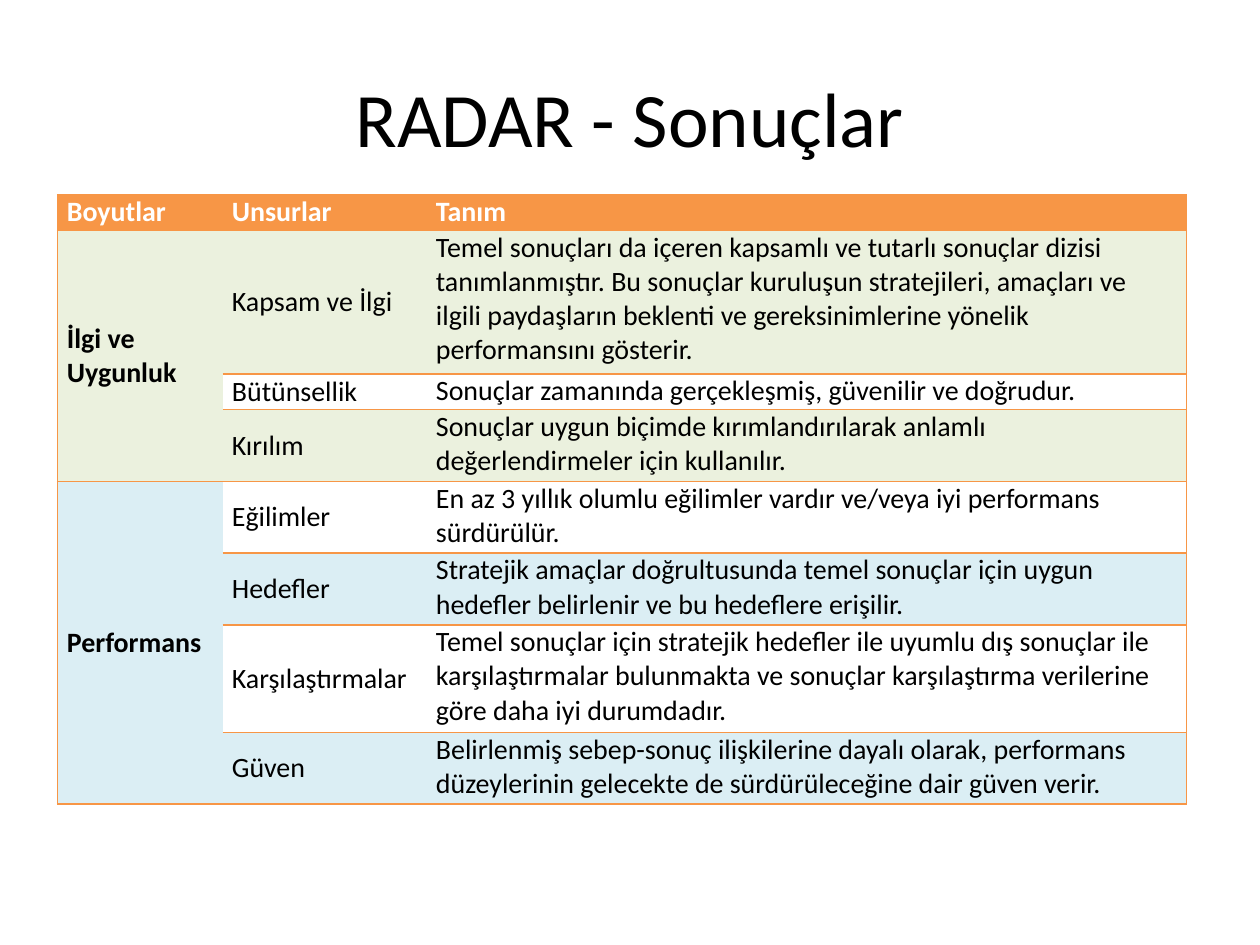
from lxml import etree
from pptx import Presentation
from pptx.dml.color import RGBColor
from pptx.enum.text import MSO_ANCHOR, PP_ALIGN
from pptx.oxml.ns import qn
from pptx.util import Pt

LEFT, CENTER, JUSTIFY = PP_ALIGN.LEFT, PP_ALIGN.CENTER, PP_ALIGN.JUSTIFY
TOP, MIDDLE = MSO_ANCHOR.TOP, MSO_ANCHOR.MIDDLE
ORANGE, GREEN, BLUE = "F79646", "EBF1DE", "DBEEF4"
BLACK, WHITE = "000000", "FFFFFF"

TITLE = "RADAR - Sonuçlar"
HEADERS = ["Boyutlar", "Unsurlar", "Tanım"]
# (dimension, band colour, [(element, definition, row height)])
GROUPS = [
    ("İlgi ve Uygunluk", GREEN, [
        ("Kapsam ve İlgi", "Temel sonuçları da içeren kapsamlı ve tutarlı sonuçlar dizisi "
         "tanımlanmıştır. Bu sonuçlar kuruluşun stratejileri, amaçları ve ilgili paydaşların "
         "beklenti ve gereksinimlerine yönelik performansını gösterir.", 82),
        ("Bütünsellik", "Sonuçlar zamanında gerçekleşmiş, güvenilir ve doğrudur.", 20.4),
        ("Kırılım", "Sonuçlar uygun biçimde kırımlandırılarak anlamlı değerlendirmeler "
         "için kullanılır.", 41),
    ]),
    ("Performans", BLUE, [
        ("Eğilimler", "En az 3 yıllık olumlu eğilimler vardır ve/veya iyi performans "
         "sürdürülür.", 41),
        ("Hedefler", "Stratejik amaçlar doğrultusunda temel sonuçlar için uygun hedefler "
         "belirlenir ve bu hedeflere erişilir.", 41),
        ("Karşılaştırmalar", "Temel sonuçlar için stratejik hedefler ile uyumlu dış sonuçlar "
         "ile karşılaştırmalar bulunmakta ve sonuçlar karşılaştırma verilerine göre daha iyi "
         "durumdadır.", 61.4),
        ("Güven", "Belirlenmiş sebep-sonuç ilişkilerine dayalı olarak, performans "
         "düzeylerinin gelecekte de sürdürüleceğine dair güven verir.", 41),
    ]),
]
HEADER_HEIGHT = 20.4
COLUMN_WIDTHS = [94.3, 116.6, 434.2]
TABLE_LEFT, TABLE_TOP = 33, 111.4
CELL_INSET = 5.3


def color(value):
    return RGBColor.from_string(value)


def write(frame, text, size=16, fill=BLACK, bold=False, align=LEFT, spacing=0):
    frame.word_wrap = True
    paragraph = frame.paragraphs[0]
    paragraph.alignment = align
    paragraph.space_before = paragraph.space_after = Pt(spacing)
    run = paragraph.add_run()
    run.text = text
    run.font.name = "Calibri"
    run.font.size = Pt(size)
    run.font.bold = bold
    run.font.color.rgb = color(fill)


def set_borders(cell, sides):
    """Draw the sides named in `sides` (of L, R, T, B) and clear the others."""
    properties = cell._tc.get_or_add_tcPr()
    for index, side in enumerate("LRTB"):
        line = etree.Element(qn(f"a:ln{side}"), w=str(Pt(1)))
        if side in sides:
            solid = etree.SubElement(line, qn("a:solidFill"))
            etree.SubElement(solid, qn("a:srgbClr"), val=ORANGE)
        else:
            etree.SubElement(line, qn("a:noFill"))
        properties.insert(index, line)


def fill_cell(cell, text, background=None, anchor=TOP, **text_format):
    cell.margin_left = cell.margin_right = Pt(CELL_INSET)
    cell.margin_top = cell.margin_bottom = 0
    cell.vertical_anchor = anchor
    if background:
        cell.fill.solid()
        cell.fill.fore_color.rgb = color(background)
    else:
        cell.fill.background()
    if text:
        write(cell.text_frame, text, **text_format)


presentation = Presentation()
presentation.slide_width, presentation.slide_height = Pt(720), Pt(540)
slide = presentation.slides.add_slide(presentation.slide_layouts[6])

title = slide.shapes.add_textbox(Pt(36), Pt(21.6), Pt(648), Pt(90))
title.text_frame.vertical_anchor = MIDDLE
write(title.text_frame, TITLE, size=44, align=CENTER)

heights = [HEADER_HEIGHT] + [row[2] for group in GROUPS for row in group[2]]
table = slide.shapes.add_table(
    len(heights), len(HEADERS), Pt(TABLE_LEFT), Pt(TABLE_TOP),
    Pt(sum(COLUMN_WIDTHS)), Pt(sum(heights))).table
table.first_row = table.horz_banding = False
for column, width in zip(table.columns, COLUMN_WIDTHS):
    column.width = Pt(width)
for row, height in zip(table.rows, heights):
    row.height = Pt(height)

for index, (header, sides) in enumerate(zip(HEADERS, ["LTB", "TB", "TRB"])):
    cell = table.cell(0, index)
    fill_cell(cell, header, ORANGE, fill=WHITE, bold=True, align=JUSTIFY, spacing=1)
    set_borders(cell, sides)

row_index = 1
for dimension, band, elements in GROUPS:
    first, last = row_index, row_index + len(elements) - 1
    table.cell(first, 0).merge(table.cell(last, 0))
    for element, definition, _ in elements:
        background = band if row_index % 2 else None
        dimension_cell, element_cell, definition_cell = table.rows[row_index].cells
        fill_cell(dimension_cell, dimension if row_index == first else "", band, MIDDLE, bold=True)
        fill_cell(element_cell, element, background, MIDDLE)
        fill_cell(definition_cell, definition, background, spacing=1)
        set_borders(dimension_cell, "LTB" if row_index == first else "LB" if row_index == last else "L")
        set_borders(element_cell, "TB")
        set_borders(definition_cell, "TRB")
        row_index += 1

presentation.save("out.pptx")
